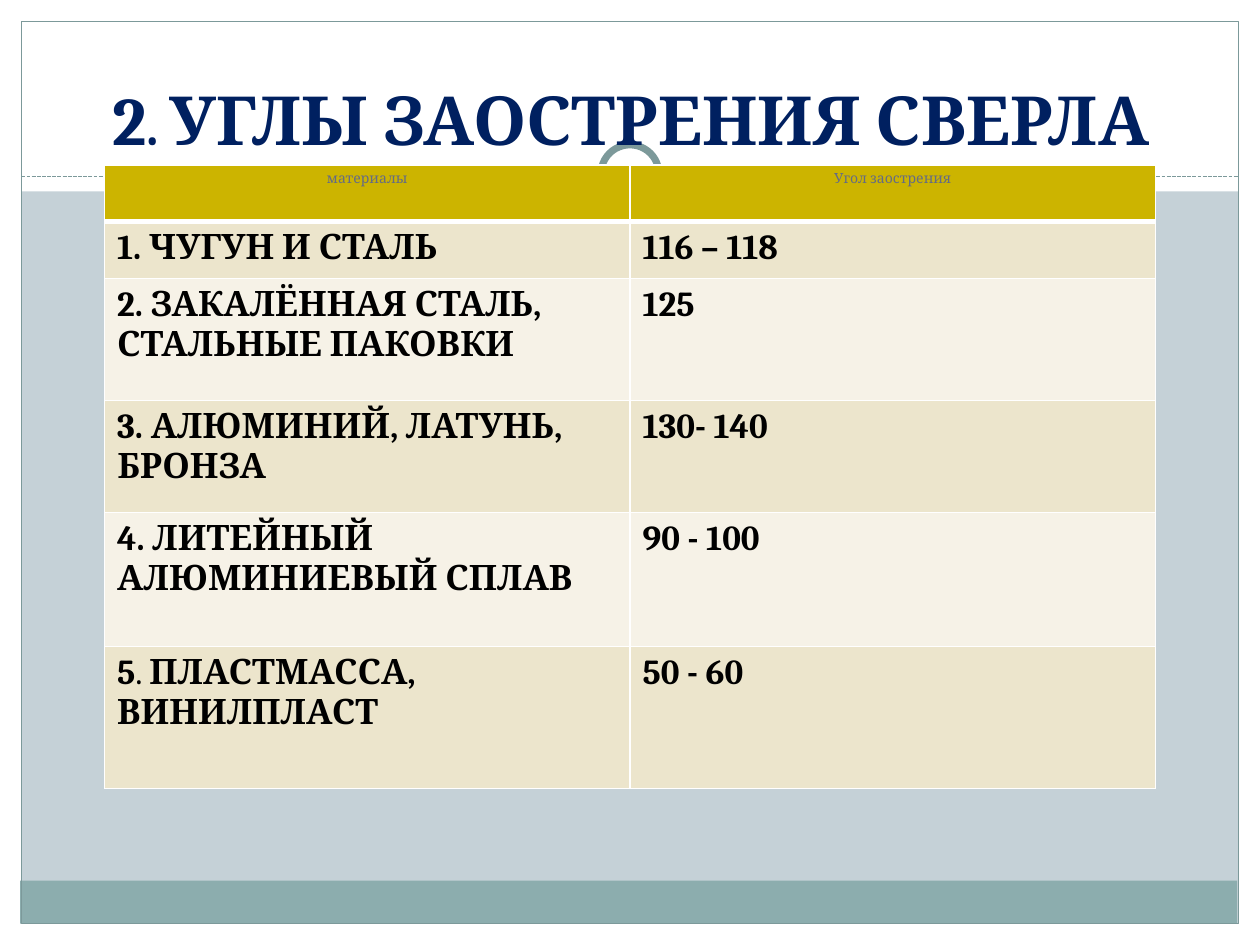
"""Build a slide with a table of drill point angles for different materials."""
import pptx
import pptx.dml.color
import pptx.enum.dml
import pptx.enum.shapes
import pptx.enum.text
import pptx.oxml.ns
import pptx.util
from lxml import etree
from pptx.util import Inches

SHAPE = pptx.enum.shapes.MSO_SHAPE
CENTER = pptx.enum.text.PP_ALIGN.CENTER


def rgb(value):
    return pptx.dml.color.RGBColor.from_string(value)


def add_run(p, text, size, color, bold):
    r = p.add_run()
    r.text = text
    r.font.name = "Cambria"
    r.font.size = pptx.util.Pt(size)
    r.font.bold = bold
    r.font.color.rgb = rgb(color)


prs = pptx.Presentation()
prs.slide_width, prs.slide_height = Inches(10), Inches(7.5)
s = prs.slides.add_slide(prs.slide_layouts[5])
s.background.fill.solid()
s.background.fill.fore_color.rgb = rgb("C5D1D7")

decor = [
    (SHAPE.RECTANGLE, 0, 7.33, 10, 0.17, "FFFFFF", None),
    (SHAPE.RECTANGLE, 0, 0, 10, 1.52, "FFFFFF", None),
    (SHAPE.RECTANGLE, 0, 0, 0.17, 7.5, "FFFFFF", None),
    (SHAPE.RECTANGLE, 9.83, 0, 0.17, 7.5, "FFFFFF", None),
    (SHAPE.RECTANGLE, 0.16, 6.99, 9.66, 0.34, "8CADAE", None),
    (SHAPE.RECTANGLE, 0.17, 0.17, 9.66, 7.16, None, 0.75),
    (SHAPE.OVAL, 4.67, 1.05, 0.67, 0.67, "FFFFFF", None),
    (SHAPE.OVAL, 4.77, 1.15, 0.46, 0.46, "FFFFFF", 4),
]
for kind, x, y, w, h, fill, width in decor:
    if kind == SHAPE.OVAL and width is None:
        line = s.shapes.add_connector(
            pptx.enum.shapes.MSO_CONNECTOR.STRAIGHT,
            Inches(0.17), Inches(1.4), Inches(9.83), Inches(1.4))
        line.line.color.rgb = rgb("7C999A")
        line.line.width = pptx.util.Pt(0.75)
        line.line.dash_style = pptx.enum.dml.MSO_LINE.SQUARE_DOT
        etree.SubElement(line._element.spPr, pptx.oxml.ns.qn("a:effectLst"))
    sp = s.shapes.add_shape(kind, Inches(x), Inches(y), Inches(w), Inches(h))
    sp.shadow.inherit = False
    if fill:
        sp.fill.solid()
        sp.fill.fore_color.rgb = rgb(fill)
    else:
        sp.fill.background()
    if width:
        sp.line.color.rgb = rgb("7C999A")
        sp.line.width = pptx.util.Pt(width)
    else:
        sp.line.fill.background()

title = s.shapes.title
s.shapes._spTree.append(title._element)
title.left, title.top = Inches(0.2), Inches(0.3)
title.width, title.height = Inches(9.61), Inches(1.01)
tf = title.text_frame
tf.word_wrap = True
tf.auto_size = pptx.enum.text.MSO_AUTO_SIZE.NONE
tf.vertical_anchor = pptx.enum.text.MSO_ANCHOR.BOTTOM
p = tf.paragraphs[0]
p.alignment = CENTER
for text, size in [("2", 38.7), (". ", 29.7), ("УГЛЫ ЗАОСТРЕНИЯ СВЕРЛА", 38.7)]:
    add_run(p, text, size, "002060", True)

rows = [
    (0.45, ["материалы"], "Угол заострения"),
    (0.45, ["1. ЧУГУН И СТАЛЬ"], "116 – 118"),
    (0.97, ["2. ЗАКАЛЁННАЯ СТАЛЬ, СТАЛЬНЫЕ ПАКОВКИ"], "125"),
    (0.89, ["3. АЛЮМИНИЙ, ЛАТУНЬ, БРОНЗА"], "130- 140"),
    (1.06, ["4. ЛИТЕЙНЫЙ АЛЮМИНИЕВЫЙ СПЛАВ"], "90 - 100"),
    (1.13, ["5", ". ", "ПЛАСТМАССА, ВИНИЛПЛАСТ"], "50 - 60"),
]
table = s.shapes.add_table(len(rows), 2, Inches(0.83), Inches(1.31),
                           Inches(8.35), Inches(4.96)).table
for col in table.columns:
    col.width = Inches(4.17)
for i, (height, material, angle) in enumerate(rows):
    table.rows[i].height = Inches(height)
    fill = "CCB400" if i == 0 else ("ECE5CC" if i % 2 else "F6F2E7")
    for j, texts in enumerate([material, [angle]]):
        cell = table.cell(i, j)
        tcPr = cell._tc.get_or_add_tcPr()
        for side in "LRTB":
            width = 3 if i == 0 and side == "B" else 1
            ln = etree.SubElement(tcPr, pptx.oxml.ns.qn("a:ln" + side),
                                  w=str(pptx.util.Pt(width)))
            solid = etree.SubElement(ln, pptx.oxml.ns.qn("a:solidFill"))
            etree.SubElement(solid, pptx.oxml.ns.qn("a:srgbClr"), val="FFFFFF")
        cell.fill.solid()
        cell.fill.fore_color.rgb = rgb(fill)
        p = cell.text_frame.paragraphs[0]
        if i == 0:
            p.alignment = CENTER
        for text in texts:
            if i == 0:
                add_run(p, text, 8, "646B86", False)
            else:
                add_run(p, text, 20, "000000", text != ". ")

prs.save("out.pptx")
